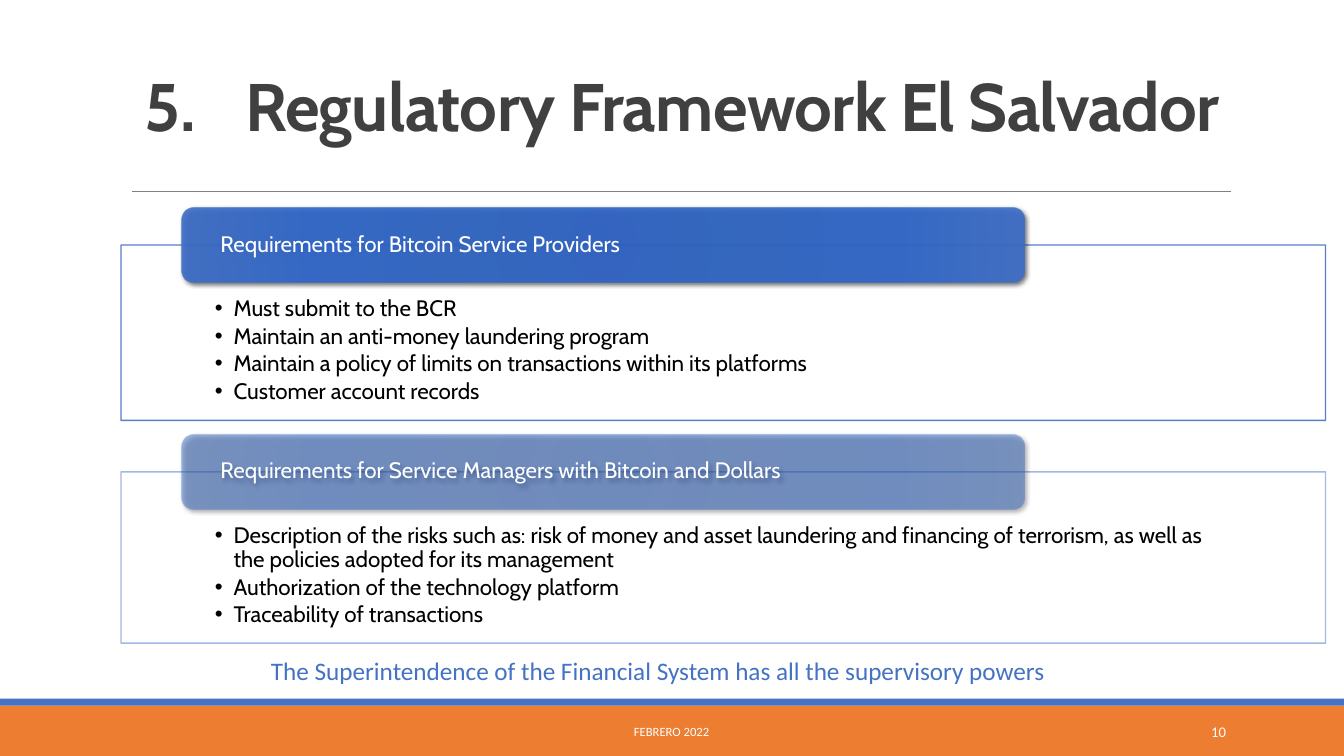
import pptx
import pptx.util
import pptx.dml.color
import pptx.enum.shapes
import pptx.enum.text
import pptx.oxml
import pptx.oxml.ns

Pt = pptx.util.Pt
Shape = pptx.enum.shapes.MSO_SHAPE
Align = pptx.enum.text.PP_ALIGN
Mid = pptx.enum.text.MSO_ANCHOR.MIDDLE
NS = pptx.oxml.ns.nsdecls("a")
HUES = {"blue": "4472C4", "orange": "ED7D31", "gray": "808080",
        "dark": "404040", "black": "000000", "white": "FFFFFF"}


def node(xml):
    """Build one DrawingML element."""
    return pptx.oxml.parse_xml(xml.replace(">", f" {NS}>", 1) if "/>" not in xml.split(">")[0] + ">"
                               else xml.replace("/>", f" {NS}/>", 1))


def write(para, text, size, hue, font, bold=False):
    run = para.add_run()
    run.text = text
    run.font.size = Pt(size)
    run.font.name = font
    run.font.bold = bold
    run.font.color.rgb = pptx.dml.color.RGBColor.from_string(HUES[hue])
    return run


deck = pptx.Presentation()
deck.slide_width, deck.slide_height = Pt(960), Pt(540)
slide = deck.slides.add_slide(deck.slide_layouts[3])
shapes = slide.shapes
title, *lists = slide.placeholders

# Footer bands
for top, high, hue in [(504, 36, "orange"), (499, 5, "blue")]:
    band = shapes.add_shape(Shape.RECTANGLE, Pt(0), Pt(top), Pt(960), Pt(high))
    band.shadow.inherit = False
    band.fill.solid()
    band.fill.fore_color.rgb = pptx.dml.color.RGBColor.from_string(HUES[hue])
    band.line.fill.background()

# Rule under the title
rule = shapes.add_connector(pptx.enum.shapes.MSO_CONNECTOR.STRAIGHT,
                            Pt(94.3), Pt(136.8), Pt(879), Pt(136.8))
rule.line.width = Pt(0.5)
rule.line.color.rgb = pptx.dml.color.RGBColor.from_string(HUES["gray"])
rule._element.spPr.append(node("<a:effectLst/>"))

# Numbered title
title.left, title.top, title.width, title.height = Pt(86.4), Pt(22.3), Pt(792), Pt(114.5)
frame = title.text_frame
frame.auto_size = pptx.enum.text.MSO_AUTO_SIZE.NONE
frame.vertical_anchor = Mid
para = frame.paragraphs[0]
para.alignment = Align.RIGHT
para.line_spacing = 0.85
props = para._p.get_or_add_pPr()
props.set("marL", str(Pt(72)))
props.set("indent", str(-Pt(72)))
props.append(node('<a:buFont typeface="+mj-lt"/>'))
props.append(node('<a:buAutoNum type="arabicPeriod" startAt="5"/>'))
run = write(para, "Regulatory Framework El Salvador", 48, "dark", "Cabin", True)
run.font._element.set("spc", "-50")

# Requirement groups: list top, list height, opacity, heading, items
groups = [
    (175, 125.3, 90, "Requirements for Bitcoin Service Providers",
     ["Must submit to the BCR",
      "Maintain an anti-money laundering program",
      "Maintain a policy of limits on transactions within its platforms",
      "Customer account records"]),
    (337, 122.4, 50, "Requirements for Service Managers with Bitcoin and Dollars",
     ["Description of the risks such as: risk of money and asset laundering and "
      "financing of terrorism, as well as the policies adopted for its management",
      "Authorization of the technology platform",
      "Traceability of transactions"]),
]
stops = [(0, "2D65C9"), (34, "3167C8"), (70, "2F68CE"), (100, "3E70CA")]

for box, (top, high, alpha, head, items) in zip(lists, groups):
    # Framed list
    box.left, box.top, box.width, box.height = Pt(86.4), Pt(top), Pt(860.4), Pt(high)
    box.fill.solid()
    box.fill.fore_color.rgb = pptx.dml.color.RGBColor.from_string(HUES["white"])
    box.line.width = Pt(1)
    box.line.color.rgb = pptx.dml.color.RGBColor.from_string(HUES["blue"])
    tints = box._element.spPr.findall(".//" + pptx.oxml.ns.qn("a:srgbClr"))
    for tint, part in zip(tints, (90, alpha)):
        tint.append(node(f'<a:alpha val="{part * 1000}"/>'))
    frame = box.text_frame
    frame.auto_size = pptx.enum.text.MSO_AUTO_SIZE.NONE
    frame.margin_left = frame.margin_right = Pt(67)
    frame.margin_top, frame.margin_bottom = Pt(37.5), Pt(8.5)
    for i, item in enumerate(items):
        para = frame.add_paragraph() if i else frame.paragraphs[0]
        para.level = 1
        para.line_spacing = 0.9
        para.space_before, para.space_after = Pt(0), Pt(2.4)
        props = para._p.get_or_add_pPr()
        props.set("marL", str(Pt(13.5)))
        props.set("indent", str(-Pt(13.5)))
        props.append(node('<a:buFont typeface="Arial"/>'))
        props.append(node('<a:buChar char="•"/>'))
        write(para, item, 16, "black", "Cabin")

    # Heading pill
    pill = shapes.add_shape(Shape.ROUNDED_RECTANGLE, Pt(129.6), Pt(top - 26.7), Pt(602), Pt(53.3))
    pill.line.fill.background()
    marks = "".join(f'<a:gs pos="{at * 1000}"><a:srgbClr val="{tint}">'
                    f'<a:alpha val="{alpha * 1000}"/></a:srgbClr></a:gs>' for at, tint in stops)
    look = pill._element.spPr
    look.insert(2, node(f'<a:gradFill><a:gsLst>{marks}</a:gsLst><a:path path="circle">'
                        '<a:fillToRect l="100000" t="100000" r="100000" b="100000"/>'
                        '</a:path></a:gradFill>'))
    look.append(node(f'<a:effectLst><a:outerShdw blurRad="{Pt(3)}" dist="{Pt(2)}" dir="2700000">'
                     f'<a:srgbClr val="{HUES["black"]}"><a:alpha val="60000"/></a:srgbClr>'
                     '</a:outerShdw></a:effectLst>'))
    frame = pill.text_frame
    frame.word_wrap = True
    frame.vertical_anchor = Mid
    frame.margin_left = frame.margin_right = Pt(25.3)
    frame.margin_top = frame.margin_bottom = Pt(0)
    para = frame.paragraphs[0]
    para.alignment = Align.LEFT
    para.line_spacing = 0.9
    write(para, head, 16, "white", "Cabin")

# Closing line, date and page number
notes = [
    (186.5, 464.4, 668, "The Superintendence of the Financial System has all the supervisory powers",
     18, "blue", Align.LEFT),
    (290, 508.3, 379.4, "FEBRERO 2022", 9, "white", Align.CENTER),
    (779.8, 508.3, 103, "10", 10.5, "white", Align.RIGHT),
]
for left, top, wide, text, size, hue, align in notes:
    frame = shapes.add_textbox(Pt(left), Pt(top), Pt(wide), Pt(29)).text_frame
    frame.word_wrap = True
    frame.vertical_anchor = Mid
    frame.paragraphs[0].alignment = align
    write(frame.paragraphs[0], text, size, hue, "Calibri")

deck.save("out.pptx")
